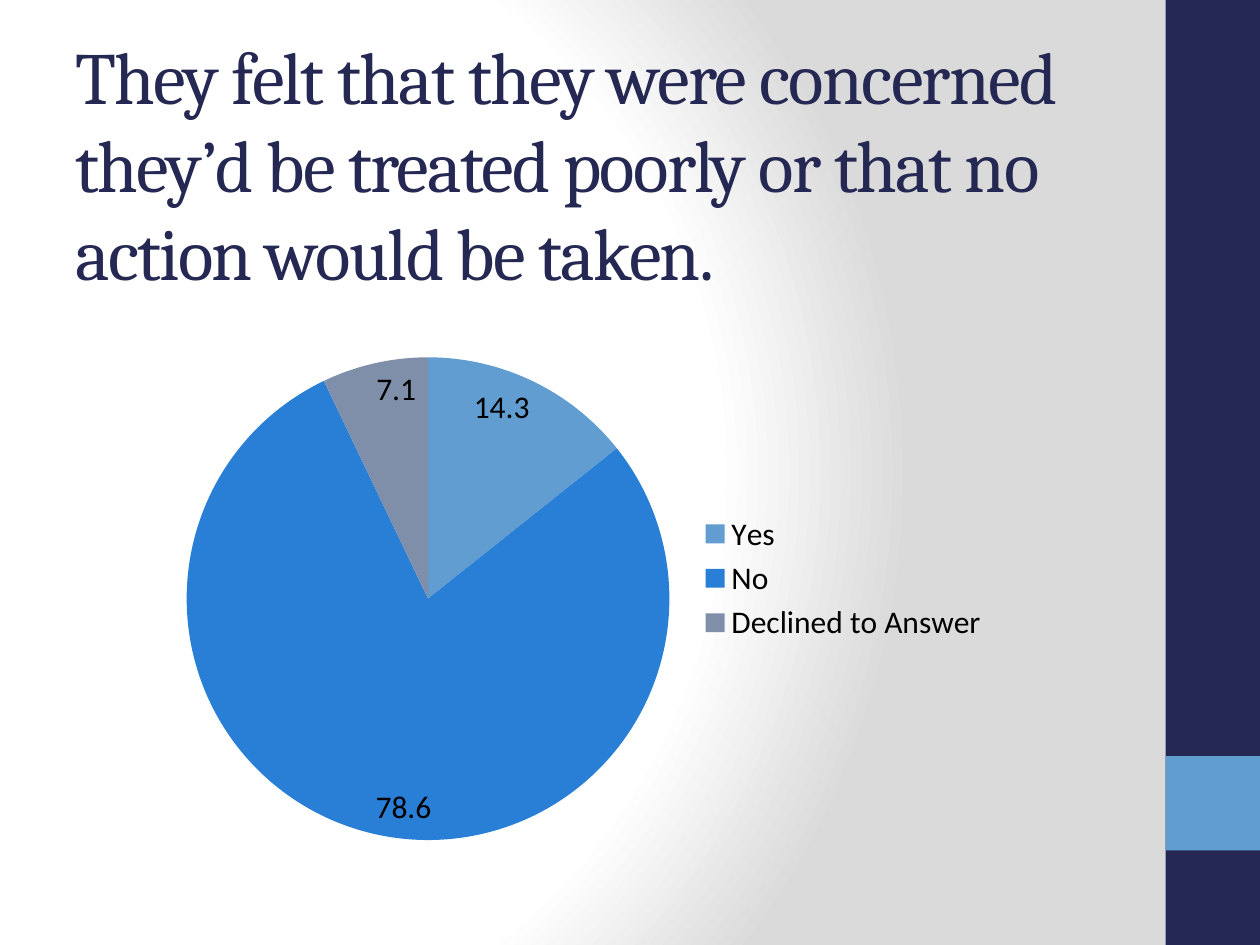
"""Build a survey slide with a pie chart and a coloured side band."""
from lxml.etree import SubElement
from pptx import Presentation
from pptx.chart.data import CategoryChartData
from pptx.dml.color import RGBColor
from pptx.enum.chart import XL_CHART_TYPE, XL_LABEL_POSITION, XL_LEGEND_POSITION
from pptx.enum.shapes import MSO_SHAPE
from pptx.enum.text import MSO_ANCHOR, MSO_AUTO_SIZE, PP_ALIGN
from pptx.oxml import parse_xml
from pptx.oxml.ns import nsdecls, qn
from pptx.util import Inches, Pt

TITLE = "They felt that they were concerned they’d be treated poorly or that no action would be taken."
ANSWERS = [("Yes", 14.3, "sky"), ("No", 78.6, "blue"), ("Declined to Answer", 7.1, "slate")]
COLORS = {"navy": "242852", "sky": "629DD1", "blue": "297FD5", "slate": "7F8FA9",
          "white": "FFFFFF", "grey": "DADADA", "black": "000000"}
STOPS = [(0, "white"), (75, "white"), (100, "grey")]
GLOW = {"l": 20, "t": 50, "r": 100, "b": 50}
BAND = 0.75
SIDE = [(0, 7.5, "navy"), (6, BAND, "sky")]
PIE = {"x": 0.03, "y": 0.105, "w": 0.575, "h": 0.863}


def color(name):
    return RGBColor.from_string(COLORS[name])


def paint_background(slide):
    stops = "".join(f'<a:gs pos="{pos * 1000}"><a:srgbClr val="{COLORS[name]}"/></a:gs>'
                    for pos, name in STOPS)
    rect = " ".join(f'{side}="{share * 1000}"' for side, share in GLOW.items())
    slide.background.fill.solid()
    solid = slide.element.find(".//" + qn("p:bgPr")).find(qn("a:solidFill"))
    solid.getparent().replace(solid, parse_xml(
        f'<a:gradFill {nsdecls("a")} rotWithShape="1"><a:gsLst>{stops}</a:gsLst>'
        f'<a:path path="circle"><a:fillToRect {rect}/></a:path></a:gradFill>'))


def add_side_band(slide):
    for top, height, name in SIDE:
        sp = slide.shapes.add_shape(MSO_SHAPE.RECTANGLE, Inches(10 - BAND), Inches(top),
                                    Inches(BAND), Inches(height))
        sp.shadow.inherit = False
        sp.fill.solid()
        sp.fill.fore_color.rgb = color(name)
        sp.line.fill.background()


def set_title(slide):
    sp = slide.shapes.title
    sp.left, sp.top, sp.width, sp.height = map(Inches, (0.5, 0.67, 8.61, 1.25))
    tf = sp.text_frame
    tf.text = TITLE
    tf.auto_size = MSO_AUTO_SIZE.NONE
    tf.vertical_anchor = MSO_ANCHOR.MIDDLE
    p = tf.paragraphs[0]
    p.alignment = PP_ALIGN.LEFT
    p.font.name, p.font.size = "Cambria", Pt(42)
    p.font.color.rgb = color("navy")
    p.runs[0].font._element.set("spc", "-100")


def add_pie(slide):
    data = CategoryChartData()
    data.categories = [answer for answer, _, _ in ANSWERS]
    data.add_series("Series 1", [value for _, value, _ in ANSWERS])
    chart = slide.shapes.add_chart(XL_CHART_TYPE.PIE, Inches(1.28), Inches(2.37),
                                   Inches(6.67), Inches(4.44), data).chart
    chart.has_title = False
    chart.font.name, chart.font.size = "Calibri", Pt(18)
    chart.font.color.rgb = color("black")
    chart.has_legend = True
    chart.legend.position = XL_LEGEND_POSITION.RIGHT
    chart.legend.include_in_layout = False
    plot = chart.plots[0]
    plot.vary_by_categories = True
    plot.has_data_labels = True
    plot.data_labels.show_value = True
    plot.data_labels.show_percentage = False
    plot.data_labels.position = XL_LABEL_POSITION.INSIDE_END
    for i, (_, _, name) in enumerate(ANSWERS):
        fill = plot.series[0].points[i].format.fill
        fill.solid()
        fill.fore_color.rgb = color(name)
    area = chart._chartSpace.find(".//" + qn("c:plotArea"))
    layout = area.find(qn("c:layout"))
    if layout is None:
        layout = SubElement(area, qn("c:layout"))
        area.insert(0, layout)
    manual = SubElement(layout, qn("c:manualLayout"))
    settings = {"layoutTarget": "inner", "xMode": "edge", "yMode": "edge", **PIE}
    for tag, value in settings.items():
        SubElement(manual, qn(f"c:{tag}")).set("val", str(value))


def main():
    prs = Presentation()
    prs.slide_width, prs.slide_height = Inches(10), Inches(7.5)
    slide = prs.slides.add_slide(prs.slide_layouts[5])
    paint_background(slide)
    add_side_band(slide)
    set_title(slide)
    add_pie(slide)
    prs.save("out.pptx")


if __name__ == "__main__":
    main()
